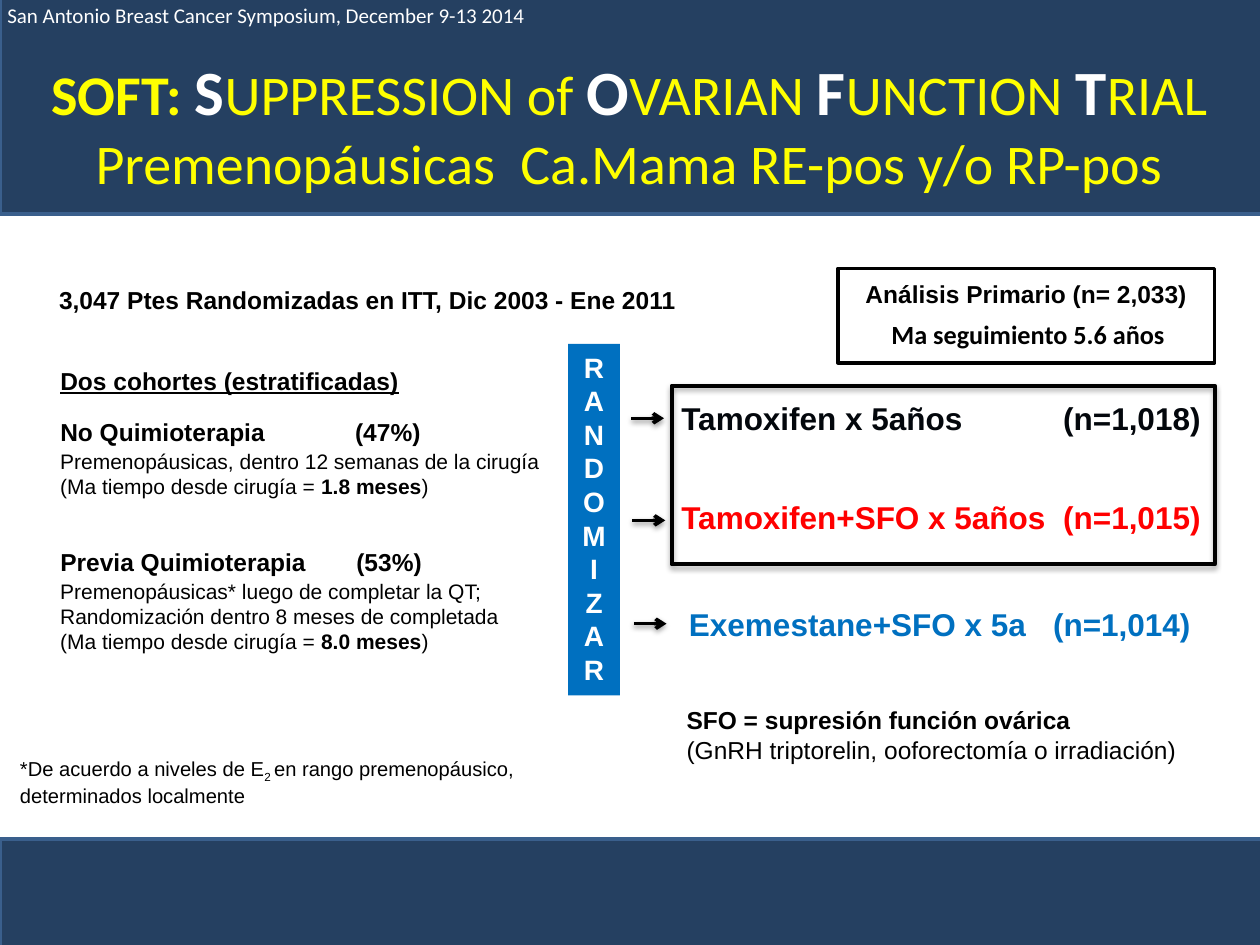
import dataclasses

import lxml.etree
import pptx
import pptx.dml.color
import pptx.enum.shapes
import pptx.enum.text
import pptx.oxml
import pptx.oxml.ns
import pptx.util

Inches = pptx.util.Inches
Pt = pptx.util.Pt
ALIGN = pptx.enum.text.PP_ALIGN
ANCHOR = pptx.enum.text.MSO_ANCHOR


@dataclasses.dataclass(frozen=True)
class Theme:
    navy: str = "254061"
    navy_edge: str = "3A5F8C"
    blue: str = "0070C0"
    yellow: str = "FFFF00"
    white: str = "FFFFFF"
    black: str = "000000"
    ink: str = "03070C"
    red: str = "FF0000"
    body_font: str = "Arial"
    head_font: str = "Calibri"
    initial: float = 36
    title: float = 32
    arm: float = 18
    letter: float = 16
    followup: float = 15
    label: float = 14
    detail: float = 12
    footnote: float = 11.5


THEME = Theme()


def rgb(value):
    return pptx.dml.color.RGBColor.from_string(value)


def add_effects(element, shadow=None):
    effects = lxml.etree.SubElement(element.spPr, pptx.oxml.ns.qn("a:effectLst"))
    if shadow:
        alpha, blur, distance = shadow
        effects.append(pptx.oxml.parse_xml(
            f'<a:outerShdw {pptx.oxml.ns.nsdecls("a")} blurRad="{Pt(blur)}" '
            f'dist="{Pt(distance)}" dir="5400000" rotWithShape="0">'
            f'<a:srgbClr val="{THEME.black}"><a:alpha val="{alpha * 1000}"/>'
            '</a:srgbClr></a:outerShdw>'))


def add_box(slide, box, fill=None, line=None, width=2, shadow=None):
    shape = slide.shapes.add_shape(
        pptx.enum.shapes.MSO_SHAPE.RECTANGLE, *map(Inches, box))
    if fill:
        shape.fill.solid()
        shape.fill.fore_color.rgb = rgb(fill)
    else:
        shape.fill.background()
    if line:
        shape.line.color.rgb = rgb(line)
        shape.line.width = Pt(width)
    else:
        shape.line.fill.background()
    if shadow:
        add_effects(shape.element, shadow)
    else:
        shape.shadow.inherit = False
    return shape


def add_run(paragraph, text, size, color, font, bold=False, underline=False, baseline=0):
    run = paragraph.add_run()
    run.text = text
    run.font.size = Pt(size)
    run.font.name = font
    run.font.bold = bold
    run.font.color.rgb = rgb(color)
    if underline:
        run.font.underline = True
    if baseline:
        run.font._element.set("baseline", str(baseline * 1000))


def write(shape, paragraphs, align=ALIGN.LEFT, anchor=ANCHOR.TOP, **style):
    style = {"size": THEME.label, "color": THEME.black, "font": THEME.body_font, **style}
    frame = shape.text_frame
    frame.word_wrap = True
    frame.vertical_anchor = anchor
    for index, runs in enumerate(paragraphs):
        paragraph = frame.paragraphs[0] if index == 0 else frame.add_paragraph()
        paragraph.alignment = align
        for text, changes in runs:
            if text == "\n":
                paragraph.add_line_break()
            else:
                add_run(paragraph, text, **{**style, **changes})


def add_text(slide, box, paragraphs, **style):
    write(slide.shapes.add_textbox(*map(Inches, box)), paragraphs, **style)


def add_line_of_text(slide, box, text, **style):
    add_text(slide, box, [[(text, {})]], **style)


def add_arrow(slide, left, top):
    arrow = slide.shapes.add_connector(
        pptx.enum.shapes.MSO_CONNECTOR.STRAIGHT,
        Inches(left), Inches(top), Inches(left + 0.26), Inches(top))
    arrow.line.color.rgb = rgb(THEME.black)
    arrow.line.width = Pt(2)
    head = lxml.etree.SubElement(arrow.line._ln, pptx.oxml.ns.qn("a:tailEnd"))
    head.set("type", "arrow")
    add_effects(arrow.element, (38, 3.1, 1.6))


def add_header(slide):
    add_box(slide, (0, -0.03, 10.02, 1.73), THEME.navy, THEME.navy_edge)
    initial = {"size": THEME.initial, "color": THEME.white, "bold": True}
    runs = [("SOFT: ", {"bold": True})]
    for letter, rest in (("S", "UPPRESSION of "), ("O", "VARIAN "),
                         ("F", "UNCTION "), ("T", "RIAL")):
        runs += [(letter, initial), (rest, {})]
    runs += [("\n", {}), ("Premenopáusicas  Ca.Mama RE-pos y/o RP-pos", {})]
    add_text(slide, (0.16, 0.36, 9.67, 1.25), [runs], align=ALIGN.CENTER,
             anchor=ANCHOR.MIDDLE, size=THEME.title, color=THEME.yellow,
             font=THEME.head_font)
    add_line_of_text(slide, (-0.04, -0.03, 4.34, 0.3),
                     "San Antonio Breast Cancer Symposium, December 9-13 2014",
                     size=THEME.detail, color=THEME.white, font=THEME.head_font)


def add_cohort(slide, top, name, share, share_left, details, months):
    add_line_of_text(slide, (0.38, top, 2.55, 0.34), name, bold=True)
    add_line_of_text(slide, (share_left, top, 0.77, 0.34), share, bold=True)
    timing = [("(Ma tiempo desde cirugía = ", {}), (months, {"bold": True}), (")", {})]
    paragraphs = [[(detail, {})] for detail in details] + [timing]
    add_text(slide, (0.38, top + 0.25, 4.17, 0.1 + 0.2 * len(paragraphs)),
             paragraphs, size=THEME.detail)


def add_arm(slide, top, left, name, count_left, count, color):
    style = {"size": THEME.arm, "color": color, "bold": True}
    add_line_of_text(slide, (left, top, 3.17, 0.4), name, **style)
    add_line_of_text(slide, (count_left, top, 1.54, 0.4), count, **style)


def main():
    deck = pptx.Presentation()
    deck.slide_width, deck.slide_height = Inches(10), Inches(7.5)
    slide = deck.slides.add_slide(deck.slide_layouts[6])

    add_header(slide)
    add_box(slide, (0, 6.66, 10.04, 0.87), THEME.navy, THEME.navy_edge)

    add_line_of_text(slide, (0.37, 2.18, 5.98, 0.4),
                     "3,047 Ptes Randomizadas en ITT, Dic 2003 - Ene 2011",
                     bold=True, anchor=ANCHOR.MIDDLE)
    add_line_of_text(slide, (0.38, 2.82, 3.28, 0.4), "Dos cohortes (estratificadas)",
                     bold=True, underline=True, anchor=ANCHOR.MIDDLE)
    add_cohort(slide, 3.26, "No Quimioterapia", "(47%)", 2.72,
               ["Premenopáusicas, dentro 12 semanas de la cirugía"], "1.8 meses")
    add_cohort(slide, 4.29, "Previa Quimioterapia", "(53%)", 2.73,
               ["Premenopáusicas* luego de completar la QT;",
                "Randomización dentro 8 meses de completada"], "8.0 meses")

    randomization = add_box(slide, (4.51, 2.73, 0.41, 2.79), THEME.blue)
    write(randomization, [[(letter, {})] for letter in "RANDOMIZAR"],
          align=ALIGN.CENTER, size=THEME.letter, color=THEME.white, bold=True)

    for left, top in ((5.01, 3.32), (5.02, 4.13), (5.03, 4.95)):
        add_arrow(slide, left, top)
    add_box(slide, (5.33, 3.06, 4.31, 1.42), line=THEME.black, width=2.25,
            shadow=(35, 3.1, 1.8))
    add_arm(slide, 3.12, 5.31, "Tamoxifen x 5años", 8.34, "(n=1,018)", THEME.ink)
    add_arm(slide, 3.9, 5.31, "Tamoxifen+SFO x 5años", 8.34, "(n=1,015)", THEME.red)
    add_arm(slide, 4.75, 5.37, "Exemestane+SFO x 5a", 8.26, "(n=1,014)", THEME.blue)

    add_box(slide, (6.65, 2.13, 2.99, 0.75), line=THEME.black)
    centered = {"align": ALIGN.CENTER, "anchor": ANCHOR.MIDDLE, "bold": True}
    add_line_of_text(slide, (6.65, 2.13, 2.99, 0.4), "Análisis Primario (n= 2,033)",
                     **centered)
    add_line_of_text(slide, (6.71, 2.5, 2.9, 0.3), "Ma seguimiento 5.6 años",
                     size=THEME.followup, font=THEME.head_font, **centered)

    add_text(slide, (5.35, 5.55, 4.52, 0.57),
             [[("SFO = supresión función ovárica", {"bold": True})],
              [("(GnRH triptorelin, ooforectomía o irradiación)", {})]])
    add_text(slide, (0.06, 5.95, 5.08, 0.49),
             [[("*De acuerdo a niveles de E", {}), ("2 ", {"baseline": -25}),
               ("en rango premenopáusico,", {}), ("\n", {}),
               ("determinados localmente", {})]], size=THEME.footnote)

    deck.save("out.pptx")


if __name__ == "__main__":
    main()
